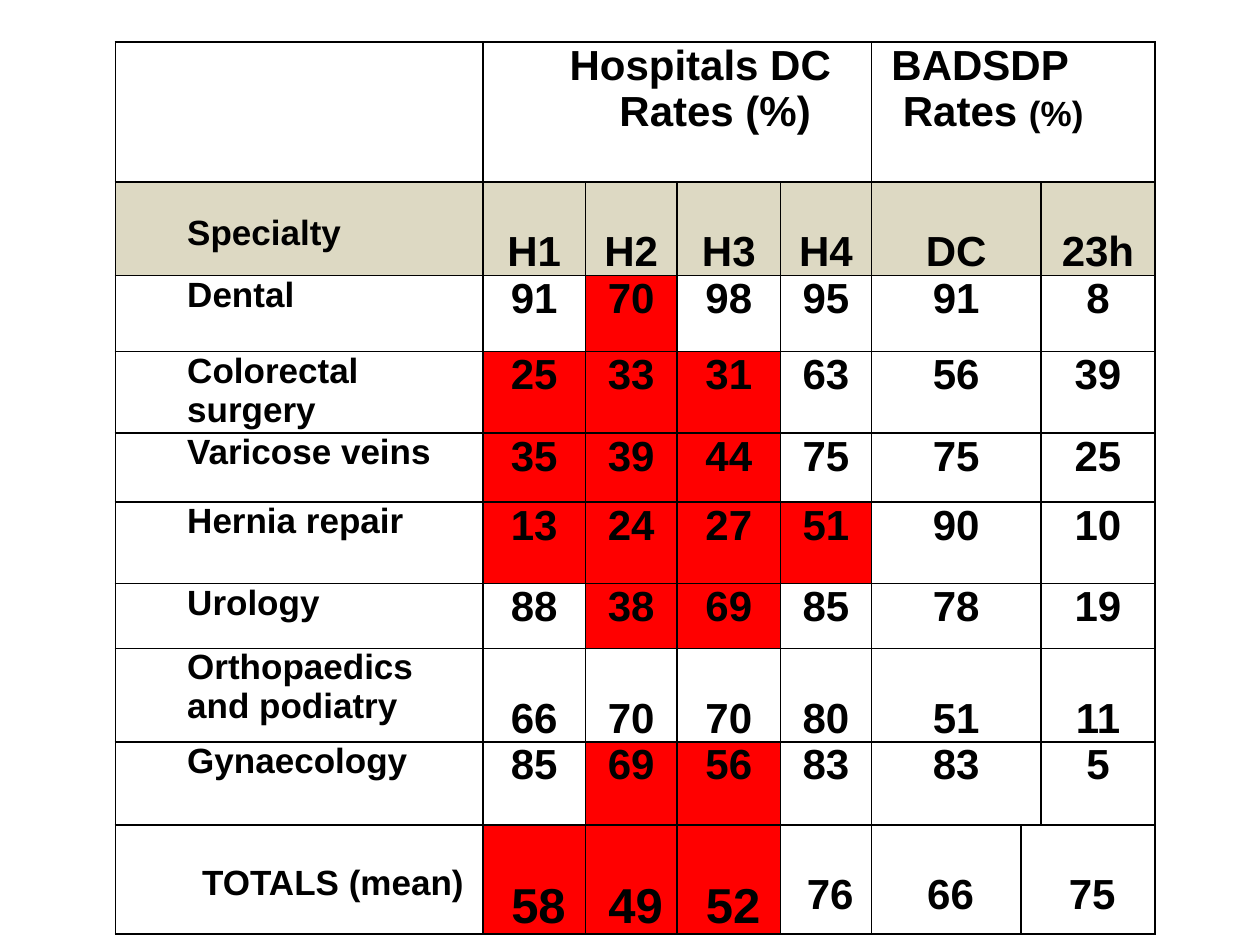
from lxml.etree import SubElement
from pptx import Presentation
from pptx.dml.color import RGBColor
from pptx.enum.text import MSO_ANCHOR, PP_ALIGN
from pptx.oxml.ns import qn
from pptx.util import Pt

BLACK = RGBColor(0x00, 0x00, 0x00)
BEIGE = RGBColor(0xDD, 0xD9, 0xC3)
RED = RGBColor(0xFF, 0x00, 0x00)

COLUMN_WIDTHS = [210, 58.5, 52.5, 59, 52, 85.5, 11.5, 65]
ROW_HEIGHTS = [80, 53.5, 43.5, 46.5, 39.5, 46.5, 37, 53.5, 47.5, 59]
HEADINGS = ["H1", "H2", "H3", "H4", "DC", "23h"]
SPECIALTIES = [
    (["Dental"], [91, 70, 98, 95, 91, 8]),
    (["Colorectal surgery"], [25, 33, 31, 63, 56, 39]),
    (["Varicose veins"], [35, 39, 44, 75, 75, 25]),
    (["Hernia repair"], [13, 24, 27, 51, 90, 10]),
    (["Urology"], [88, 38, 69, 85, 78, 19]),
    (["Orthopaedics", "and podiatry"], [66, 70, 70, 80, 51, 11]),
    (["Gynaecology"], [85, 69, 56, 83, 83, 5]),
]
TOTALS = [58, 49, 52, 76, 66, 75]
HOSPITALS = 4
BENCHMARK = 4  # position of the DC rate the hospitals are held against
VALUE_COLUMNS = [1, 2, 3, 4, 5, 7]
TOTAL_COLUMNS = [1, 2, 3, 4, 5, 6]


def write(paragraph, text, size=24, align=PP_ALIGN.LEFT, indent=0, spacing=None):
    """Add a run to the paragraph and format both."""
    run = paragraph.add_run()
    run.text = text
    run.font.name = "Arial"
    run.font.size = Pt(size)
    run.font.bold = True
    run.font.color.rgb = BLACK
    paragraph.alignment = align
    properties = paragraph._p.get_or_add_pPr()
    properties.set("marL", str(Pt(indent)))
    properties.set("indent", "0")
    if spacing:
        paragraph.line_spacing = spacing


def add_borders(cell):
    properties = cell._tc.get_or_add_tcPr()
    for side in ("lnL", "lnR", "lnT", "lnB"):
        line = SubElement(properties, qn(f"a:{side}"), w=str(Pt(1)))
        fill = SubElement(line, qn("a:solidFill"))
        SubElement(fill, qn("a:srgbClr"), val=str(BLACK))


presentation = Presentation()
presentation.slide_width = Pt(720)
presentation.slide_height = Pt(540)
slide = presentation.slides.add_slide(presentation.slide_layouts[6])

# Table grid
table = slide.shapes.add_table(
    len(ROW_HEIGHTS), len(COLUMN_WIDTHS),
    Pt(66), Pt(24), Pt(sum(COLUMN_WIDTHS)), Pt(sum(ROW_HEIGHTS)),
).table
table.first_row = False
table.horz_banding = False
for column, width in zip(table.columns, COLUMN_WIDTHS):
    column.width = Pt(width)
for row, height in zip(table.rows, ROW_HEIGHTS):
    row.height = Pt(height)

last_row = len(ROW_HEIGHTS) - 1
table.cell(0, 1).merge(table.cell(0, 4))
table.cell(0, 5).merge(table.cell(0, 7))
for row_index in range(1, last_row):
    table.cell(row_index, 5).merge(table.cell(row_index, 6))
table.cell(last_row, 6).merge(table.cell(last_row, 7))

for cell in table.iter_cells():
    if cell.is_spanned:
        continue
    cell.margin_left = cell.margin_right = Pt(5)
    cell.margin_top = cell.margin_bottom = Pt(0)
    add_borders(cell)
    cell.fill.background()

# Group headings
hospital_frame = table.cell(0, 1).text_frame
write(hospital_frame.paragraphs[0], "Hospitals DC", indent=44.5)
write(hospital_frame.add_paragraph(), "Rates (%)", indent=73)
benchmark_frame = table.cell(0, 5).text_frame
write(benchmark_frame.paragraphs[0], "BADSDP", indent=6.5)
rates = benchmark_frame.add_paragraph()
write(rates, "Rates ", indent=13)
write(rates, "(%)", size=20, indent=13)

# Column headings
specialty = table.cell(1, 0)
specialty.margin_top = Pt(18)
write(specialty.text_frame.paragraphs[0], "Specialty", size=20, indent=36)
for column_index, heading in zip(VALUE_COLUMNS, HEADINGS):
    cell = table.cell(1, column_index)
    cell.vertical_anchor = MSO_ANCHOR.BOTTOM
    write(cell.text_frame.paragraphs[0], heading, align=PP_ALIGN.CENTER)
for column_index in [0] + VALUE_COLUMNS:
    fill = table.cell(1, column_index).fill
    fill.solid()
    fill.fore_color.rgb = BEIGE

# Specialty labels and the totals label
for row_index, (lines, _) in enumerate(SPECIALTIES, start=2):
    frame = table.cell(row_index, 0).text_frame
    for line_index, line in enumerate(lines):
        paragraph = frame.add_paragraph() if line_index else frame.paragraphs[0]
        write(paragraph, line, size=20, indent=36)
write(table.cell(last_row, 0).text_frame.paragraphs[0], "TOTALS (mean)",
      size=20, indent=44.5, spacing=2.0)

# Rates, with hospitals below the benchmark in red
value_rows = [values for _, values in SPECIALTIES] + [TOTALS]
for row_index, values in enumerate(value_rows, start=2):
    is_total = row_index == last_row
    columns = TOTAL_COLUMNS if is_total else VALUE_COLUMNS
    for position, (column_index, value) in enumerate(zip(columns, values)):
        cell = table.cell(row_index, column_index)
        is_low = position < HOSPITALS and value < values[BENCHMARK]
        if is_low:
            cell.fill.solid()
            cell.fill.fore_color.rgb = RED
        if not is_total and len(SPECIALTIES[row_index - 2][0]) > 1:
            cell.vertical_anchor = MSO_ANCHOR.BOTTOM
        write(cell.text_frame.paragraphs[0], str(value),
              size=28 if is_total and is_low else 24,
              align=PP_ALIGN.CENTER,
              indent=5 if is_total else 0,
              spacing=2.0 if is_total else None)

presentation.save("out.pptx")
